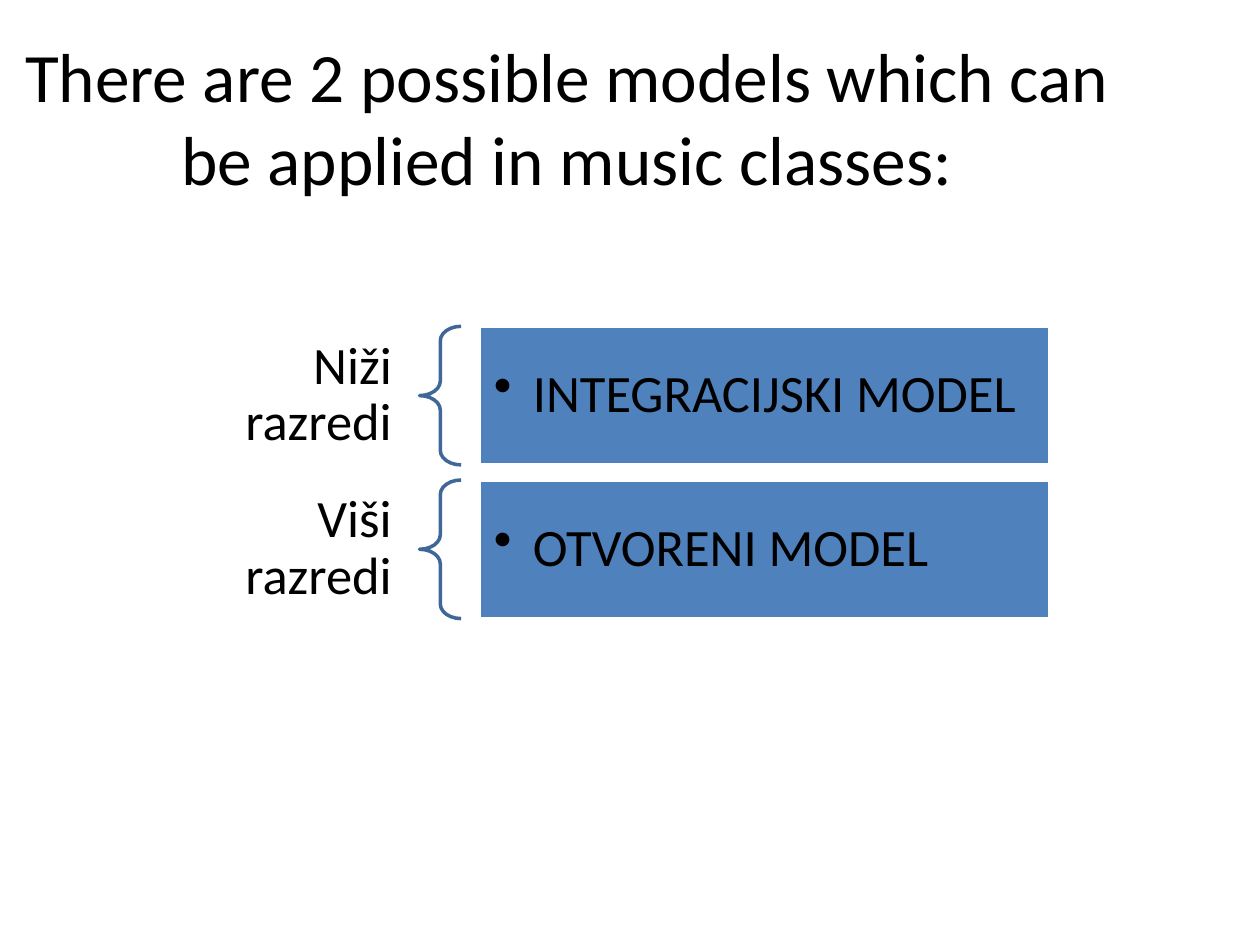
"""Build a slide pairing two class levels with their music teaching models."""
from lxml.etree import SubElement
from pptx import Presentation
from pptx.dml.color import RGBColor as RGB
from pptx.enum.shapes import MSO_SHAPE as SHAPE
from pptx.enum.text import MSO_ANCHOR as ANCHOR, MSO_AUTO_SIZE as AUTO, PP_ALIGN as ALIGN
from pptx.oxml.ns import qn
from pptx.util import Inches, Pt

TITLE = "There are 2 possible models which can be applied in music classes:"
MODELS = [
    ("Niži razredi", "INTEGRACIJSKI MODEL"),
    ("Viši razredi", "OTVORENI MODEL"),
]
THEME = {
    "font": "Calibri", "title": 39.6, "body": 30, "line": 2,
    "text": RGB.from_string("000000"), "box": RGB.from_string("4F81BD"),
    "edge": RGB.from_string("FFFFFF"), "brace": RGB.from_string("3F6797"),
}
TOP, HEIGHT, PITCH = 2.59, 1.1, 1.22
LABEL, BRACE, BOX = (1.67, 1.67), (3.33, 0.33), (3.8, 4.53)


def place(column, row):
    left, width = column
    return [Inches(v) for v in (left, TOP + row * PITCH, width, HEIGHT)]


def write(sp, text, size, align, margins, spacing=None, bullet=False):
    tf = sp.text_frame
    side, end = (Inches(m) for m in margins)
    frame = {"word_wrap": True, "auto_size": AUTO.NONE, "vertical_anchor": ANCHOR.MIDDLE,
             "margin_left": side, "margin_right": side,
             "margin_top": end, "margin_bottom": end}
    for name, value in frame.items():
        setattr(tf, name, value)
    p = tf.paragraphs[0]
    p.alignment, p.line_spacing = align, spacing
    if bullet:
        pPr = p._p.get_or_add_pPr()
        pPr.set("marL", str(Inches(0.31)))
        pPr.set("indent", str(-Inches(0.31)))
        SubElement(pPr, qn("a:buChar"), char="•")
    r = p.add_run()
    r.text = text
    for name, value in {"name": THEME["font"], "size": Pt(size)}.items():
        setattr(r.font, name, value)
    r.font.color.rgb = THEME["text"]


def add_outlined(s, kind, position, color):
    sp = s.shapes.add_shape(kind, *position)
    sp.shadow.inherit = False
    sp.line.color.rgb, sp.line.width = color, Pt(THEME["line"])
    return sp


def add_model(s, row, label, model):
    write(s.shapes.add_textbox(*place(LABEL, row)), label, THEME["body"],
          ALIGN.RIGHT, (0.23, 0.08), 0.9)
    brace = add_outlined(s, SHAPE.LEFT_BRACE, place(BRACE, row), THEME["brace"])
    brace.fill.background()
    brace.adjustments[0], brace.adjustments[1] = 0.35, 0.5
    box = add_outlined(s, SHAPE.RECTANGLE, place(BOX, row), THEME["edge"])
    box.fill.solid()
    box.fill.fore_color.rgb = THEME["box"]
    write(box, model, THEME["body"], ALIGN.LEFT, (0.12, 0.12), 0.9, bullet=True)


def main():
    prs = Presentation()
    prs.slide_width, prs.slide_height = Inches(10), Inches(7.5)
    s = prs.slides.add_slide(prs.slide_layouts[5])
    title = s.shapes.title
    title.left, title.top, title.width, title.height = (
        Inches(v) for v in (0, 0.3, 9, 1.25))
    write(title, TITLE, THEME["title"], ALIGN.CENTER, (0.1, 0.05))
    for row, (label, model) in enumerate(MODELS):
        add_model(s, row, label, model)
    prs.save("out.pptx")


if __name__ == "__main__":
    main()
